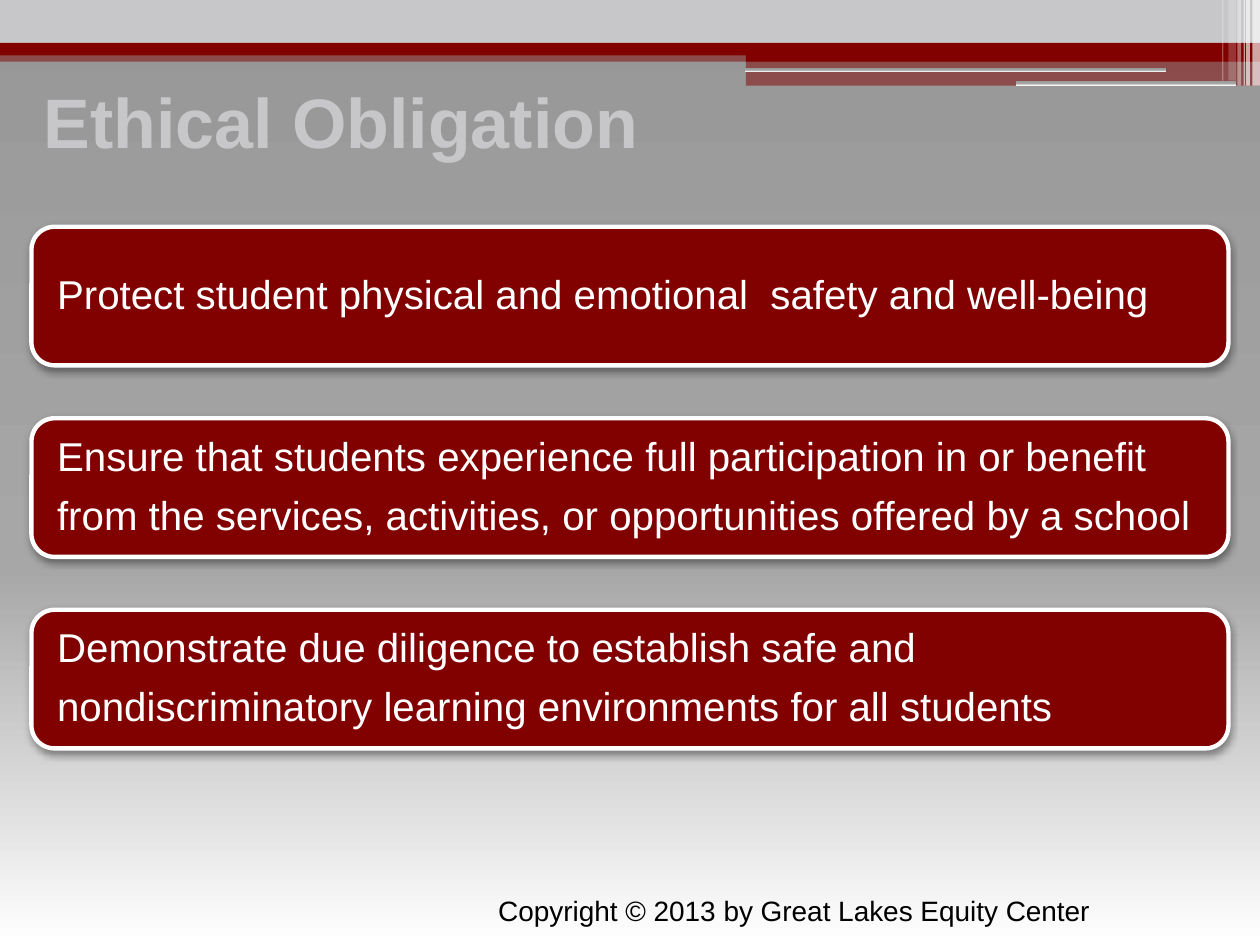
from copy import deepcopy

from lxml.etree import SubElement
from pptx import Presentation
from pptx.dml.color import RGBColor
from pptx.enum.shapes import MSO_SHAPE
from pptx.enum.text import MSO_ANCHOR, PP_ALIGN
from pptx.oxml.ns import qn
from pptx.util import Inches, Pt

MAROON = RGBColor(0x81, 0x00, 0x00)
SILVER = RGBColor(0xC7, 0xC7, 0xCA)
DARK_GRAY = RGBColor(0x97, 0x97, 0x97)
MID_GRAY = RGBColor(0xA7, 0xA7, 0xA7)
WHITE = RGBColor(0xFF, 0xFF, 0xFF)
BLACK = RGBColor(0x00, 0x00, 0x00)

GRADIENT = [(0, DARK_GRAY), (0.6, MID_GRAY), (1, WHITE)]


class Deck:
    """Holds the style and the current slide; the grid is 100 columns by 75 rows."""

    font = "Arial"
    cell = Inches(0.1)

    def __init__(self):
        self.prs = Presentation()
        self.prs.slide_width = 100 * self.cell
        self.prs.slide_height = 75 * self.cell
        self.s = self.prs.slides.add_slide(self.prs.slide_layouts[6])

    def place(self, *box):
        return [round(v * self.cell) for v in box]

    def gradient(self, fill, element):
        fill.gradient()
        fill.gradient_angle = 270
        stops = next(element.iter(qn("a:gsLst")))
        stops.insert(1, deepcopy(stops[0]))
        for stop, (position, color) in zip(fill.gradient_stops, GRADIENT):
            stop.position = position
            stop.color.rgb = color

    def background(self):
        self.gradient(self.s.background.fill, self.s.element)

    def bar(self, box, color=None, alpha=100, kind=MSO_SHAPE.RECTANGLE):
        """A borderless shape; without a color it takes the gradient."""
        sp = self.s.shapes.add_shape(kind, *self.place(*box))
        sp.shadow.inherit = False
        sp.line.fill.background()
        if color is None:
            self.gradient(sp.fill, sp.element)
            return sp
        sp.fill.solid()
        sp.fill.fore_color.rgb = color
        if alpha < 100:
            clr = next(sp.element.spPr.iter(qn("a:srgbClr")))
            SubElement(clr, qn("a:alpha"), val=str(alpha * 1000))
        return sp

    def set_text(self, tf, lines, font, paragraph=None, **frame):
        for name, value in {"word_wrap": True, **frame}.items():
            setattr(tf, name, value)
        for i, line in enumerate(lines):
            p = tf.paragraphs[0] if i == 0 else tf.add_paragraph()
            for name, value in (paragraph or {}).items():
                setattr(p, name, value)
            r = p.add_run()
            r.text = line
            r.font.color.rgb = font["color"]
            for name, value in {"name": self.font, **font}.items():
                if name != "color":
                    setattr(r.font, name, value)

    def text(self, box, *args, **frame):
        sp = self.s.shapes.add_textbox(*self.place(*box))
        self.set_text(sp.text_frame, *args, **frame)

    def card(self, box, lines):
        sp = self.bar(box, MAROON, kind=MSO_SHAPE.ROUNDED_RECTANGLE)
        sp.line.color.rgb = WHITE
        sp.line.width = Pt(2.5)
        # Soft shadow straight below
        effects = sp.element.spPr.find(qn("a:effectLst"))
        shadow = SubElement(effects, qn("a:outerShdw"), blurRad=str(Pt(4.1)),
                            dist=str(Pt(2)), dir="5400000", rotWithShape="0")
        clr = SubElement(shadow, qn("a:srgbClr"), val=str(BLACK))
        SubElement(clr, qn("a:alpha"), val="40000")
        self.set_text(sp.text_frame, lines, {"size": Pt(23), "color": WHITE},
                      {"alignment": PP_ALIGN.LEFT, "line_spacing": 0.9, "space_after": Pt(9)},
                      vertical_anchor=MSO_ANCHOR.MIDDLE,
                      margin_left=Inches(0.15), margin_right=Inches(0.15))


BANDS = [
    ((0, 4, 100, 0.9), MAROON, 50),
    ((0, 0, 100, 3.4), SILVER, 100),
    ((0, 3.4, 100, 1), MAROON, 100),
    ((59.2, 3.9, 40.8, 1), MAROON, 100),
    ((59.2, 4.8, 40.8, 2), MAROON, 50),
]
SLITS = [(59.1, 5.4, 33.5, 0.3), (80.6, 6.4, 17.5, 0.4)]
# Left, width, height, opacity
STRIPES = [
    (99.4, 0.6, 6.8, 65),
    (98.9, 0.3, 6.8, 65),
    (98.7, 0.1, 6.8, 60),
    (98.2, 0.3, 6.8, 40),
    (97.5, 0.6, 6.4, 20),
    (97, 0.1, 6.4, 30),
]
OBLIGATIONS = [
    ["Protect student physical and emotional  safety and well-being"],
    ["Ensure that students experience full participation in or benefit",
     "from the services, activities, or opportunities offered by a school"],
    ["Demonstrate due diligence to establish safe and",
     "nondiscriminatory learning environments for all students"],
]
CARD_TOP, CARD_STEP = 18, 15.2


def main():
    deck = Deck()
    deck.background()

    # Header decoration
    for box, color, alpha in BANDS:
        deck.bar(box, color, alpha)
    for box in SLITS:
        deck.bar(box, kind=MSO_SHAPE.ROUNDED_RECTANGLE)
    for left, width, height, alpha in STRIPES:
        deck.bar((left, 0, width, height), WHITE, alpha)

    # Title
    deck.text((2.5, 5, 90, 9.2), ["Ethical Obligation"],
              {"size": Pt(40), "bold": True, "color": SILVER},
              vertical_anchor=MSO_ANCHOR.MIDDLE)

    # Obligation cards
    for i, lines in enumerate(OBLIGATIONS):
        deck.card((2.5, CARD_TOP + i * CARD_STEP, 95, 11), lines)

    # Copyright line
    deck.text((36.7, 70.4, 50.8, 3.7), ["Copyright © 2013 by Great Lakes Equity Center"],
              {"size": Pt(16), "color": BLACK}, {"alignment": PP_ALIGN.RIGHT})

    deck.prs.save("out.pptx")


if __name__ == "__main__":
    main()
